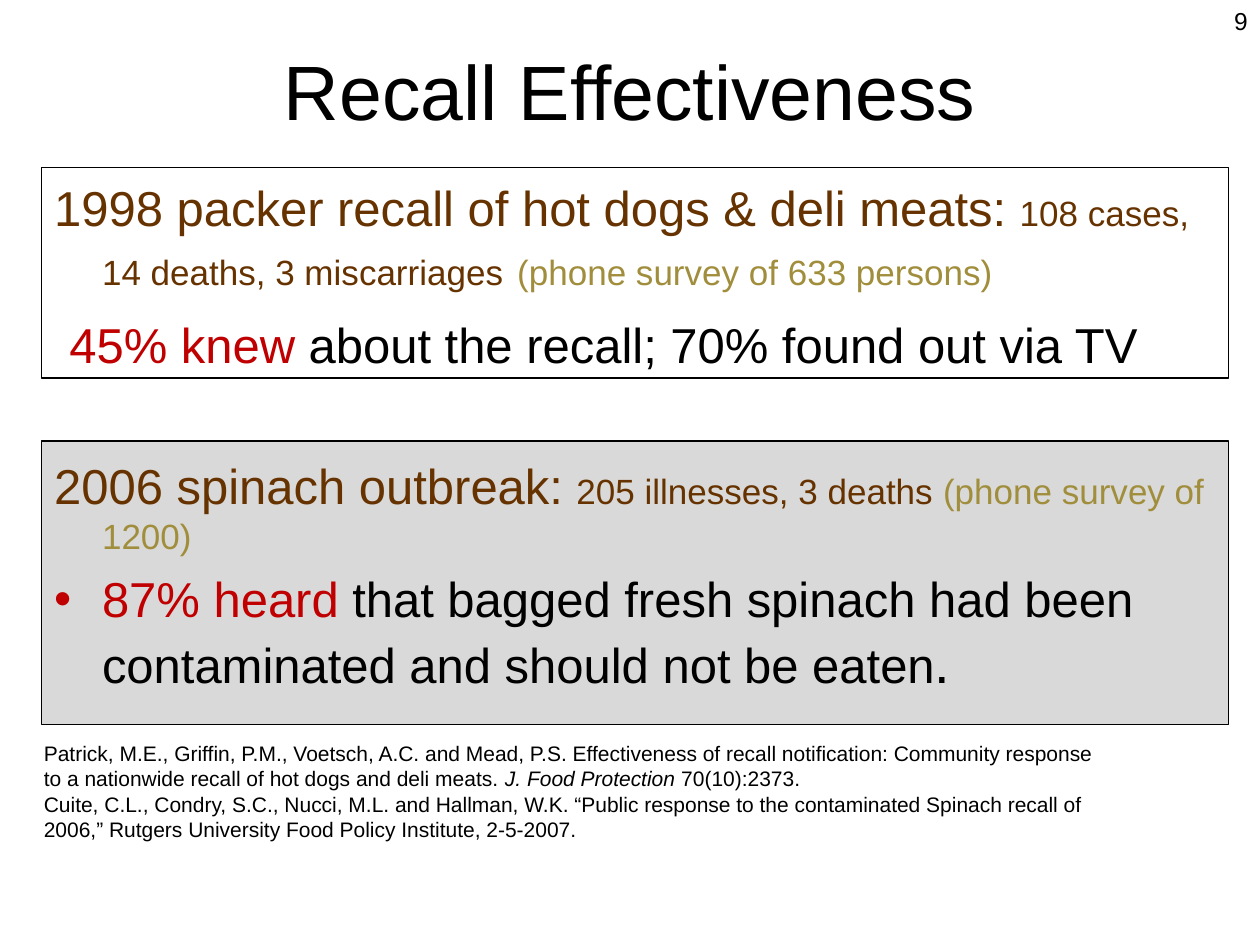
from dataclasses import dataclass

import pptx
import pptx.dml.color
import pptx.enum.shapes
import pptx.enum.text
import pptx.oxml
import pptx.oxml.ns
import pptx.util
from pptx.util import Inches

ALIGN = pptx.enum.text.PP_ALIGN


@dataclass(frozen=True)
class Theme:
    font: str = "Arial"
    black: str = "000000"
    white: str = "FFFFFF"
    gray: str = "D9D9D9"
    brown: str = "663300"
    olive: str = "A18E3D"
    red: str = "C00000"
    title: int = 44
    large: int = 32
    main: int = 28
    detail: int = 20
    number: int = 14
    source: int = 12


THEME = Theme()


def rgb(color):
    return pptx.dml.color.RGBColor.from_string(color)


def style(font, size=None, color=None):
    if size:
        font.size = pptx.util.Pt(size)
    if color:
        font.color.rgb = rgb(color)


def place(shape, left, top, width, height):
    shape.left, shape.top = Inches(left), Inches(top)
    shape.width, shape.height = Inches(width), Inches(height)


def add_panel(page, top, height, fill):
    panel = page.shapes.add_shape(
        pptx.enum.shapes.MSO_SHAPE.RECTANGLE,
        Inches(0.33), Inches(top), Inches(9.42), Inches(height))
    panel.shadow.inherit = False
    panel.fill.solid()
    panel.fill.fore_color.rgb = rgb(fill)
    panel.line.color.rgb = rgb(THEME.black)
    panel.line.width = pptx.util.Pt(0.75)


def set_indent(para, first_line, bullet=None):
    """Hang the first line from a 0.38 inch margin, with or without a bullet."""
    properties = para._p.get_or_add_pPr()
    properties.set("marL", str(Inches(0.38)))
    properties.set("indent", str(Inches(first_line)))
    tag = "a:buChar" if bullet else "a:buNone"
    mark = pptx.oxml.parse_xml(f"<{tag} {pptx.oxml.ns.nsdecls('a')}/>")
    if bullet:
        mark.set("char", bullet)
    properties.append(mark)


def add_spans(para, spans):
    for text, size, color in spans:
        span = para.add_run()
        span.text = text
        style(span.font, size, color)


def next_paragraph(frame, index):
    return frame.paragraphs[0] if index == 0 else frame.add_paragraph()


def fill_title(page, text):
    title = page.shapes.title
    place(title, 0.75, 0.17, 8.5, 1.08)
    frame = title.text_frame
    frame.text = text
    frame.auto_size = pptx.enum.text.MSO_AUTO_SIZE.NONE
    frame.vertical_anchor = pptx.enum.text.MSO_ANCHOR.MIDDLE
    para = frame.paragraphs[0]
    para.alignment = ALIGN.CENTER
    para.font.name = THEME.font
    style(para.font, THEME.title, THEME.black)


def fill_body(body, paragraphs):
    place(body, 0.33, 1.36, 9.33, 4.3)
    frame = body.text_frame
    frame.auto_size = pptx.enum.text.MSO_AUTO_SIZE.NONE
    for index, (space, first_line, bullet, spans) in enumerate(paragraphs):
        para = next_paragraph(frame, index)
        set_indent(para, first_line, bullet)
        para.space_before = pptx.util.Pt(space)
        para.font.name = THEME.font
        add_spans(para, spans)


def add_text(page, bounds, paragraphs, size, align=ALIGN.LEFT):
    """Add a text box; each paragraph is a list of (text, italic) spans."""
    box = page.shapes.add_textbox(*map(Inches, bounds))
    frame = box.text_frame
    frame.word_wrap = True
    for index, spans in enumerate(paragraphs):
        para = next_paragraph(frame, index)
        para.alignment = align
        para.font.name = THEME.font
        style(para.font, size, THEME.black)
        for text, italic in spans:
            span = para.add_run()
            span.text = text
            if italic:
                span.font.italic = True


def main():
    deck = pptx.Presentation()
    deck.slide_width, deck.slide_height = Inches(10), Inches(7.5)
    page = deck.slides.add_slide(deck.slide_layouts[1])
    body = page.placeholders[1]

    # Panels go behind the title and body text
    add_panel(page, 3.5, 2.25, THEME.gray)
    add_panel(page, 1.33, 1.67, THEME.white)
    for holder in (page.shapes.title, body):
        holder.element.getparent().append(holder.element)

    # Title and the two recall cases
    fill_title(page, "Recall Effectiveness")
    main_size, detail = THEME.main, THEME.detail
    fill_body(body, [
        (0, -0.38, None, [
            ("1998 packer recall of hot dogs & deli meats: ", main_size, THEME.brown),
            ("108 cases, 14 deaths, 3 miscarriages", detail, THEME.brown),
            (" ", main_size, THEME.brown),
            ("(phone survey of 633 persons)", detail, THEME.olive)]),
        (11, -0.26, None, [
            ("45% knew ", main_size, THEME.red),
            ("about the recall; 70% found out via TV", main_size, THEME.black)]),
        (47, -0.38, None, [
            ("2006 spinach outbreak: ", main_size, THEME.brown),
            ("205 illnesses, 3 deaths ", detail, THEME.brown),
            ("(phone survey of 1200)", detail, THEME.olive)]),
        (7, -0.38, "•", [
            ("87% heard ", main_size, THEME.red),
            ("that bagged fresh spinach had been contaminated and should "
             "not be eaten", main_size, THEME.black),
            (".", THEME.large, THEME.black)]),
    ])

    # Sources and page number
    add_text(page, (0.25, 5.83, 8.67, 0.91), [
        [("Patrick, M.E., Griffin, P.M., Voetsch, A.C. and Mead, P.S. "
          "Effectiveness of recall notification: Community response to a "
          "nationwide recall of hot dogs and deli meats. ", False),
         ("J. Food Protection ", True),
         ("70(10):2373.", False)],
        [("Cuite, C.L., Condry, S.C., Nucci, M.L. and Hallman, W.K. “Public "
          "response to the contaminated Spinach recall of 2006,” Rutgers "
          "University Food Policy Institute, 2-5-2007.", False)],
    ], THEME.source)
    add_text(page, (7.92, 0, 2.08, 0.5), [[("9", False)]], THEME.number, ALIGN.RIGHT)

    deck.save("out.pptx")


if __name__ == "__main__":
    main()
